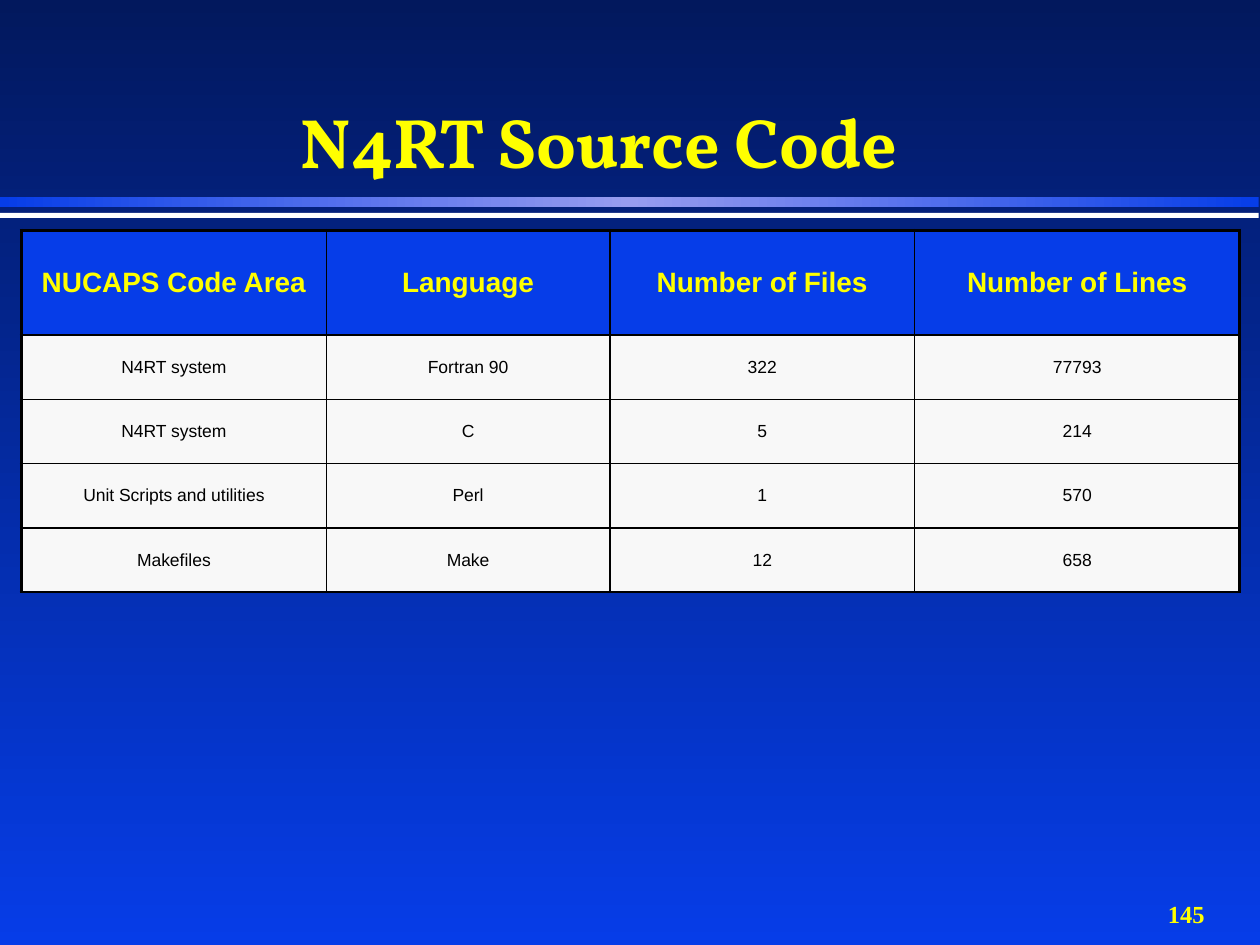
import copy

import pptx
import pptx.dml.color
import pptx.enum.shapes
import pptx.enum.text
import pptx.oxml
import pptx.oxml.ns
import pptx.util

WIDTH, HEIGHT = 10, 7.5
NAVY, BLUE, LILAC = "02185D", "063DE8", "979CEF"
YELLOW, WHITE, PALE, BLACK = "FFFF00", "FFFFFF", "F8F8F8", "000000"
COLUMN_WIDTHS = [2.42, 2.25, 2.42, 2.58]
HEADER_HEIGHT, ROW_HEIGHT = 0.83, 0.51
OUTER_LINE, INNER_LINE = 2.25, 1
ROWS = [
    ["NUCAPS Code Area", "Language", "Number of Files", "Number of Lines"],
    ["N4RT system", "Fortran 90", "322", "77793"],
    ["N4RT system", "C", "5", "214"],
    ["Unit Scripts and utilities", "Perl", "1", "570"],
    ["Makefiles", "Make", "12", "658"],
]
ALIGN = pptx.enum.text.PP_ALIGN
ANCHOR = pptx.enum.text.MSO_ANCHOR


def rgb(colour):
    return pptx.dml.color.RGBColor.from_string(colour)


def inches(*lengths):
    return [pptx.util.Inches(length) for length in lengths]


def set_gradient(fill, owner, colours, angle):
    """Spread the colours evenly; owner is the XML element that holds the fill."""
    fill.gradient()
    fill.gradient_angle = angle
    stops = next(owner.iter(pptx.oxml.ns.qn("a:gsLst")))
    while len(stops) < len(colours):
        stops.append(copy.deepcopy(stops[-1]))
    for index, (stop, colour) in enumerate(zip(fill.gradient_stops, colours)):
        stop.color.rgb = rgb(colour)
        stop.position = index / (len(colours) - 1)


def add_bar(page, top, height):
    bar = page.shapes.add_shape(
        pptx.enum.shapes.MSO_SHAPE.RECTANGLE, *inches(0, top, WIDTH - 0.01, height))
    bar.shadow.inherit = False
    bar.line.fill.background()
    return bar


def style_paragraph(para, font, size, colour, bold, align):
    para.alignment = align
    para.font.name = font
    para.font.size = pptx.util.Pt(size)
    para.font.bold = bold
    para.font.color.rgb = rgb(colour)


def add_text(page, text, place, anchor, *style):
    box = page.shapes.add_textbox(*inches(*place))
    box.text_frame.word_wrap = True
    box.text_frame.vertical_anchor = anchor
    para = box.text_frame.paragraphs[0]
    para.text = text
    style_paragraph(para, *style)
    return para


def set_borders(cell, widths):
    """Draw the left, right, top and bottom borders, in that order."""
    properties = cell._tc.get_or_add_tcPr()
    for side, width in zip("LRTB", widths):
        properties.append(pptx.oxml.parse_xml(
            f'<a:ln{side} {pptx.oxml.ns.nsdecls("a")} w="{pptx.util.Pt(width)}">'
            f'<a:solidFill><a:srgbClr val="{BLACK}"/></a:solidFill></a:ln{side}>'))


def fill_cell(cell, text, is_header):
    cell.fill.solid()
    cell.fill.fore_color.rgb = rgb(BLUE if is_header else PALE)
    cell.vertical_anchor = ANCHOR.MIDDLE
    para = cell.text_frame.paragraphs[0]
    para.text = text
    size, colour = (16, YELLOW) if is_header else (10, BLACK)
    style_paragraph(para, "Arial", size, colour, is_header, ALIGN.CENTER)


def add_code_table(page, left, top):
    heights = [HEADER_HEIGHT] + [ROW_HEIGHT] * (len(ROWS) - 1)
    table = page.shapes.add_table(
        len(ROWS), len(COLUMN_WIDTHS),
        *inches(left, top, sum(COLUMN_WIDTHS), sum(heights))).table
    table.first_row = table.horz_banding = False
    for column, width in zip(table.columns, inches(*COLUMN_WIDTHS)):
        column.width = width
    for row, height in zip(table.rows, inches(*heights)):
        row.height = height
    last = len(COLUMN_WIDTHS) - 1
    for r, texts in enumerate(ROWS):
        for c, text in enumerate(texts):
            cell = table.cell(r, c)
            on_edge = [c == 0, c == last, r == 0, False]
            set_borders(cell, [OUTER_LINE if edge else INNER_LINE for edge in on_edge])
            fill_cell(cell, text, r == 0)


def main():
    deck = pptx.Presentation()
    deck.slide_width, deck.slide_height = inches(WIDTH, HEIGHT)
    page = deck.slides.add_slide(deck.slide_layouts[6])
    set_gradient(page.background.fill, page.element, [NAVY, BLUE], 270)

    glow_bar = add_bar(page, 1.56, 0.08)
    set_gradient(glow_bar.fill, glow_bar.element, [BLUE, LILAC, BLUE], 0)
    white_bar = add_bar(page, 1.69, 0.04)
    white_bar.fill.solid()
    white_bar.fill.fore_color.rgb = rgb(WHITE)

    add_text(page, "145", (7.58, 7, 2.08, 0.5), ANCHOR.MIDDLE,
             "Times New Roman", 14, YELLOW, True, ALIGN.RIGHT)
    title = add_text(page, "N4RT Source Code", (1.42, 0.25, 6.67, 1.25), ANCHOR.BOTTOM,
                     "Vollkorn", 40, YELLOW, True, ALIGN.CENTER)
    title.line_spacing = 0.85
    add_code_table(page, 0.17, 1.83)
    deck.save("out.pptx")


if __name__ == "__main__":
    main()
